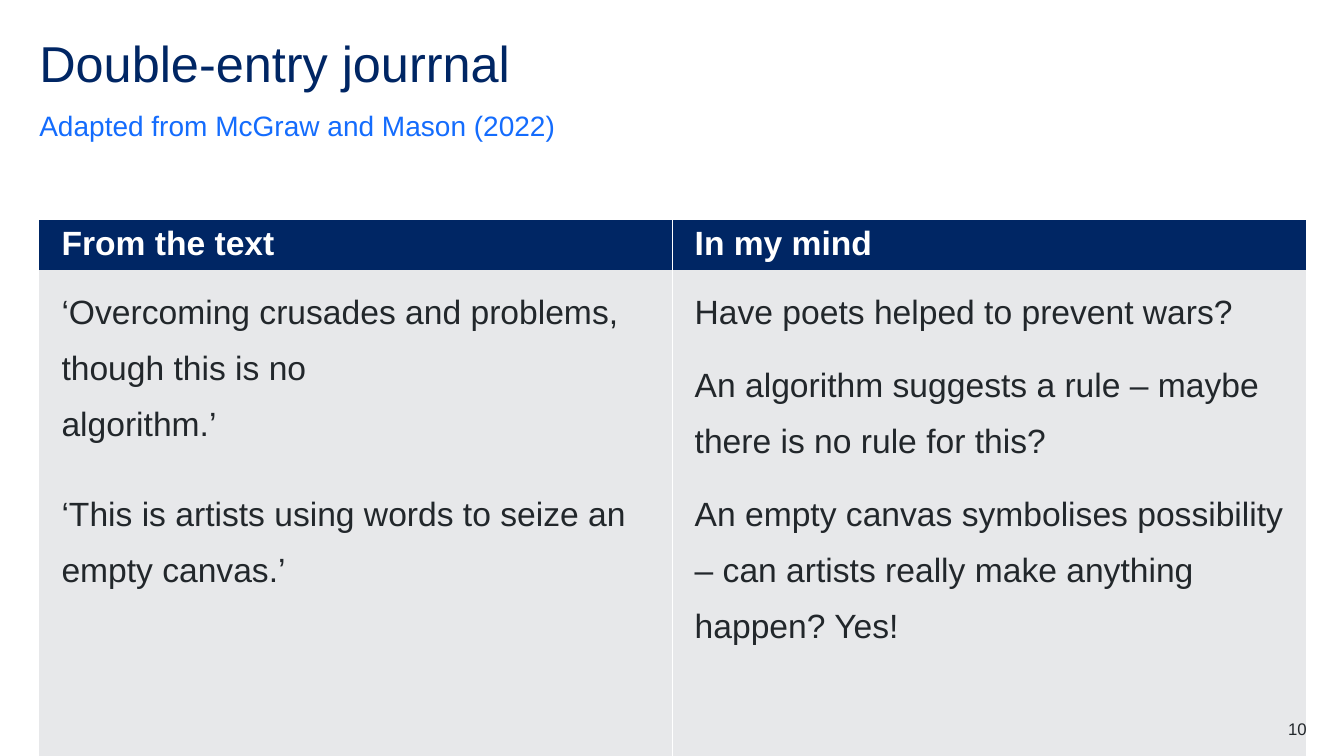
from dataclasses import dataclass

from lxml.etree import SubElement
from pptx import Presentation
from pptx.dml.color import RGBColor
from pptx.enum.text import MSO_ANCHOR, PP_ALIGN
from pptx.oxml.ns import qn
from pptx.slide import Slide
from pptx.table import _Cell
from pptx.text.text import TextFrame
from pptx.util import Emu, Pt

EMU_PER_PX = 9144
NAVY = RGBColor(0x00, 0x26, 0x64)
BLUE = RGBColor(0x14, 0x6C, 0xFD)
INK = RGBColor(0x22, 0x27, 0x2B)
GREY = RGBColor(0xE7, 0xE8, 0xEA)
WHITE = RGBColor(0xFF, 0xFF, 0xFF)
NO_STYLE_NO_GRID = "{2D5ABB26-0587-4C30-8999-92F81FD0307C}"


@dataclass(frozen=True)
class Label:
    text: str
    left: int
    top: int
    width: int
    height: int
    size: int
    color: RGBColor
    spacing: float = 1.0
    align: PP_ALIGN = PP_ALIGN.LEFT
    anchor: MSO_ANCHOR = MSO_ANCHOR.TOP


@dataclass(frozen=True)
class Entry:
    text: str
    before: int = 0
    after: int = 12


@dataclass(frozen=True)
class JournalColumn:
    heading: str
    entries: tuple[Entry, ...]
    inner_side: str


LABELS = (
    Label("Double-entry jourrnal", 39, 39, 1256, 60, 36, NAVY, spacing=0.9),
    Label("Adapted from McGraw and Mason (2022)", 39, 107, 1256, 34, 20, BLUE,
          spacing=1.5, anchor=MSO_ANCHOR.BOTTOM),
)
PAGE_NUMBER = Label("10", 1217, 713, 79, 20, 12, INK, align=PP_ALIGN.RIGHT)
COLUMNS = (
    JournalColumn("From the text", (
        Entry("‘Overcoming crusades and problems, though this is no\valgorithm.’"),
        Entry("‘This is artists using words to seize an empty canvas.’", before=12, after=0),
    ), "a:lnR"),
    JournalColumn("In my mind", (
        Entry("Have poets helped to prevent wars?"),
        Entry("An algorithm suggests a rule – maybe there is no rule for this?"),
        Entry("An empty canvas symbolises possibility – can artists really make anything happen? Yes!"),
    ), "a:lnL"),
)


def px(length: int) -> Emu:
    return Emu(length * EMU_PER_PX)


def write_text(text_frame: TextFrame, text: str, *, size: int, color: RGBColor,
               bold: bool = False, spacing: float = 1.0, before: int = 0,
               after: int = 0, indent: int = 0,
               align: PP_ALIGN = PP_ALIGN.LEFT) -> None:
    paragraph = text_frame.paragraphs[-1]
    if paragraph.text:
        paragraph = text_frame.add_paragraph()
    paragraph.text = text
    paragraph.alignment = align
    paragraph.line_spacing = spacing
    paragraph.space_before = Pt(before)
    paragraph.space_after = Pt(after)
    properties = paragraph._p.get_or_add_pPr()
    properties.set("marL", str(px(indent)))
    properties.set("indent", "0")
    for run in paragraph.runs:
        run.font.name = "Arial"
        run.font.size = Pt(size)
        run.font.bold = bold
        run.font.color.rgb = color


def add_label(slide: Slide, label: Label) -> None:
    shape = slide.shapes.add_textbox(px(label.left), px(label.top),
                                     px(label.width), px(label.height))
    text_frame = shape.text_frame
    text_frame.word_wrap = True
    text_frame.vertical_anchor = label.anchor
    text_frame.margin_left = text_frame.margin_right = 0
    text_frame.margin_top = text_frame.margin_bottom = 0
    write_text(text_frame, label.text, size=label.size, color=label.color,
               spacing=label.spacing, align=label.align)


def style_cell(cell: _Cell, fill: RGBColor, inner_side: str) -> None:
    cell.fill.solid()
    cell.fill.fore_color.rgb = fill
    properties = cell._tc.get_or_add_tcPr()
    line = SubElement(properties, qn(inner_side), w=str(Pt(1)))
    solid = SubElement(line, qn("a:solidFill"))
    SubElement(solid, qn("a:srgbClr"), val=str(WHITE))
    properties.insert(0, line)


def add_journal(slide: Slide, columns: tuple[JournalColumn, ...]) -> None:
    frame = slide.shapes.add_table(2, len(columns), px(39), px(218), px(1256), px(532))
    table = frame.table
    table.horz_banding = False
    table._tbl.tblPr.find(qn("a:tableStyleId")).text = NO_STYLE_NO_GRID
    for row, height in zip(table.rows, (47, 485)):
        row.height = px(height)
    for index, column in enumerate(columns):
        heading, body = table.cell(0, index), table.cell(1, index)
        style_cell(heading, NAVY, column.inner_side)
        style_cell(body, GREY, column.inner_side)
        write_text(heading.text_frame, column.heading, size=24, color=WHITE,
                   bold=True, indent=12)
        for entry in column.entries:
            write_text(body.text_frame, entry.text, size=24, color=INK, spacing=1.5,
                       before=entry.before, after=entry.after, indent=12)


def main() -> None:
    presentation = Presentation()
    presentation.slide_width = px(1333)
    presentation.slide_height = px(750)
    slide = presentation.slides.add_slide(presentation.slide_layouts[6])
    for label in LABELS:
        add_label(slide, label)
    add_journal(slide, COLUMNS)
    add_label(slide, PAGE_NUMBER)
    presentation.save("out.pptx")


if __name__ == "__main__":
    main()
